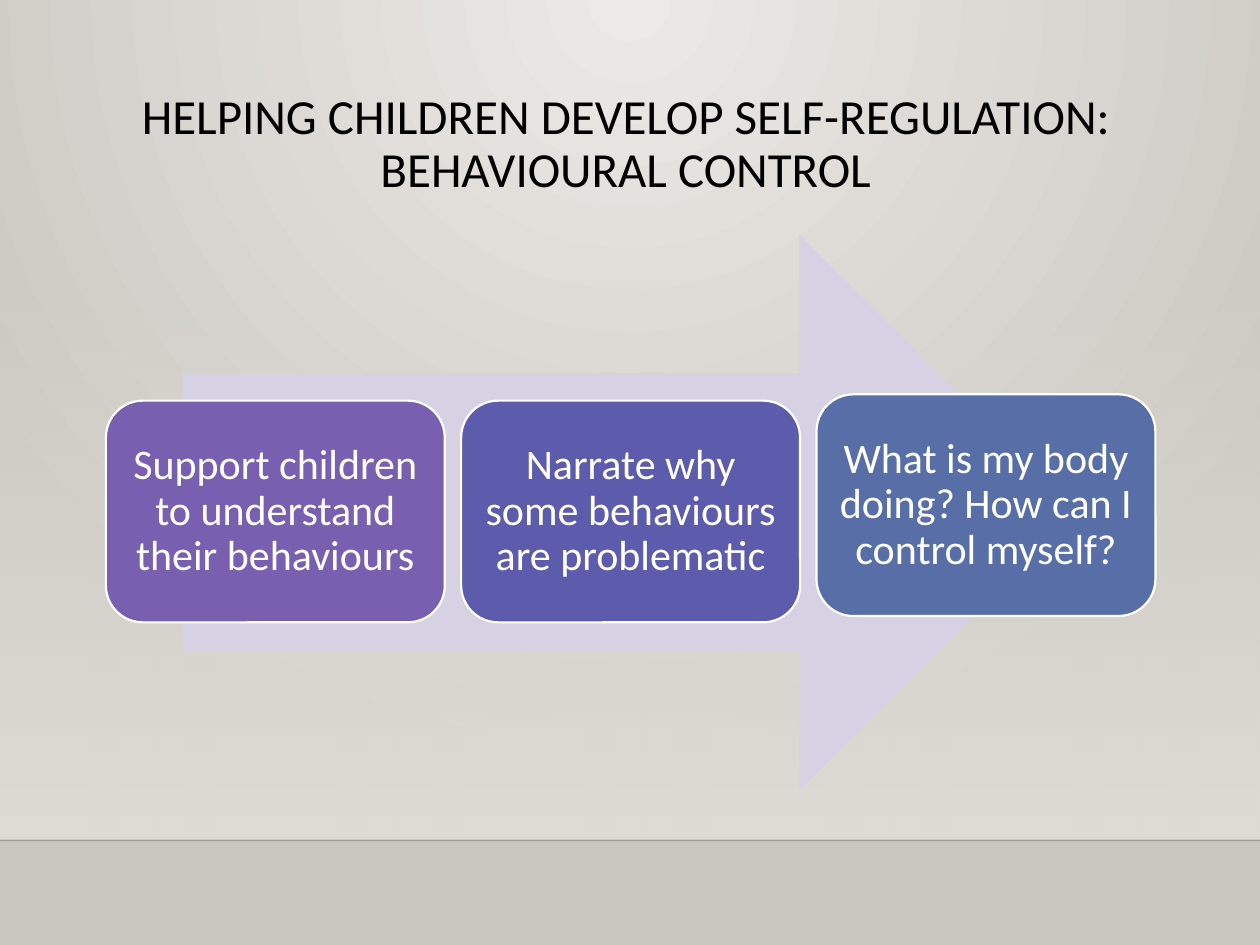
import copy

import pptx
import pptx.dml.color
import pptx.enum.shapes
import pptx.enum.text
import pptx.oxml.ns
import pptx.oxml.xmlchemy
import pptx.util
from lxml import etree

Inches = pptx.util.Inches
Pt = pptx.util.Pt
qn = pptx.oxml.ns.qn
Shape = pptx.enum.shapes.MSO_SHAPE
Anchor = pptx.enum.text.MSO_ANCHOR


def color(value):
    return pptx.dml.color.RGBColor.from_string(value)


def set_alpha(color_element, percent):
    etree.SubElement(color_element, qn("a:alpha"), val=str(percent * 1000))


def write_text(frame, text, size=24, font="Calibri", fill="FFFFFF", anchor=Anchor.MIDDLE):
    frame.word_wrap = True
    frame.auto_size = pptx.enum.text.MSO_AUTO_SIZE.NONE
    frame.vertical_anchor = anchor
    para = frame.paragraphs[0]
    para.text = text
    para.alignment = pptx.enum.text.PP_ALIGN.CENTER
    para.line_spacing = 0.9
    for span in para.runs:
        span.font.size = Pt(size)
        span.font.name = font
        span.font.color.rgb = color(fill)
    # Line breaks take the same format as the text around them
    for line_break in para._p.findall(qn("a:br")):
        line_break.insert(0, copy.deepcopy(para.runs[0]._r.rPr))


class SlideBuilder:
    def __init__(self, deck):
        self.page = deck.slides.add_slide(deck.slide_layouts[5])

    def gradient(self, fill, start, end):
        fill.gradient()
        for stop, value in zip(fill.gradient_stops, (start, end)):
            stop.color.rgb = color(value)

    def background(self, center, edge):
        self.gradient(self.page.background.fill, center, edge)
        grad = self.page.element.find(".//" + qn("a:gradFill"))
        grad.remove(grad.find(qn("a:lin")))
        circle = etree.SubElement(grad, qn("a:path"), path="circle")
        etree.SubElement(circle, qn("a:fillToRect"), l="43000", t="0", r="43000", b="100000")

    def shape(self, kind, left, top, width, height, fill=None, outline=None):
        box = self.page.shapes.add_shape(
            kind, Inches(left), Inches(top), Inches(width), Inches(height))
        box.shadow.inherit = False
        if fill:
            box.fill.solid()
            box.fill.fore_color.rgb = color(fill)
        if outline:
            box.line.color.rgb = color(outline)
            box.line.width = Pt(1.25)
        else:
            box.line.fill.background()
        return box

    def fading_wall(self, top, height, fill):
        wall = self.shape(Shape.RECTANGLE, 0, top, 10, height)
        self.gradient(wall.fill, fill, fill)
        wall.fill.gradient_angle = 270
        set_alpha(wall._element.find(".//" + qn("a:gs"))[0], 0)

    def floor_line(self, top):
        line = self.page.shapes.add_connector(
            pptx.enum.shapes.MSO_CONNECTOR.STRAIGHT, 0, Inches(top), Inches(10), Inches(top))
        line.line.color.rgb = color("000001")
        line.line.width = Pt(1)
        set_alpha(line._element.spPr.find(".//" + qn("a:srgbClr")), 20)
        etree.SubElement(line._element.spPr, qn("a:effectLst"))

    def title(self, text, left, top, width, height):
        box = self.page.shapes.title
        box.left, box.top = Inches(left), Inches(top)
        box.width, box.height = Inches(width), Inches(height)
        write_text(box.text_frame, text, size=28, fill="000000", anchor=Anchor.TOP)

    def card(self, text, left, top, fill):
        box = self.shape(Shape.ROUNDED_RECTANGLE, left, top, 2.69, 1.76, fill, "FFFFFF")
        frame = box.text_frame
        frame.margin_left = frame.margin_right = Inches(0.1)
        frame.margin_top = frame.margin_bottom = Inches(0.1)
        write_text(frame, text)


def main():
    deck = pptx.Presentation()
    deck.slide_width, deck.slide_height = Inches(10), Inches(7.5)
    slide = SlideBuilder(deck)

    # Backdrop: wall and floor
    slide.background("ECEAE7", "CAC7C1")
    slide.fading_wall(2.2, 4.46, "DFDBD5")
    slide.floor_line(6.67)

    slide.title("HELPING CHILDREN DEVELOP SELF-REGULATION:\nBEHAVIOURAL CONTROL",
                0.51, 0.68, 8.91, 1.25)

    # Process arrow with three steps; the last sits slightly higher
    slide.shape(Shape.RIGHT_ARROW, 1.45, 1.86, 7.1, 4.41, "D7D2E3")
    steps = [
        ("Support children to understand their behaviours", 3.18, "795FAF"),
        ("Narrate why some behaviours are problematic", 3.18, "5D5BAB"),
        ("What is my body doing? How can I control myself?", 3.13, "586EA6"),
    ]
    for index, (text, top, fill) in enumerate(steps):
        slide.card(text, 0.84 + index * 2.82, top, fill)

    deck.save("out.pptx")


if __name__ == "__main__":
    main()
